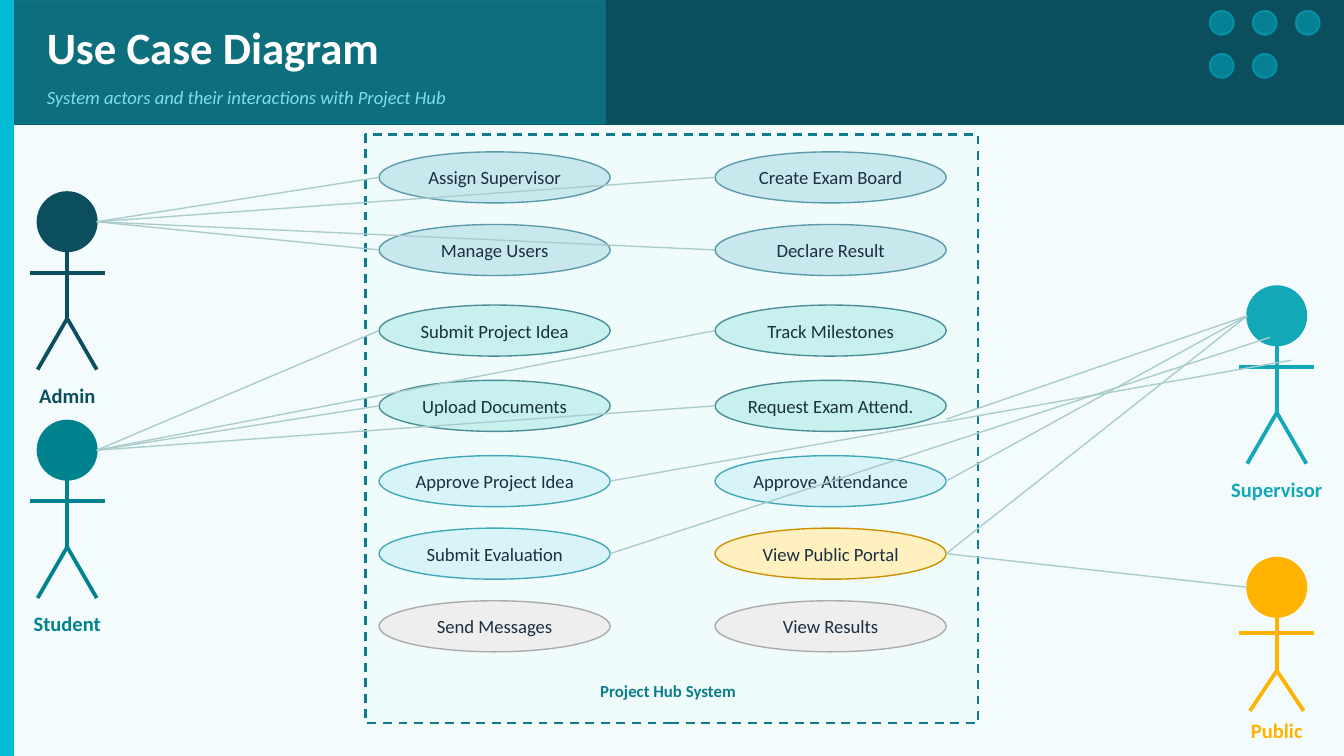
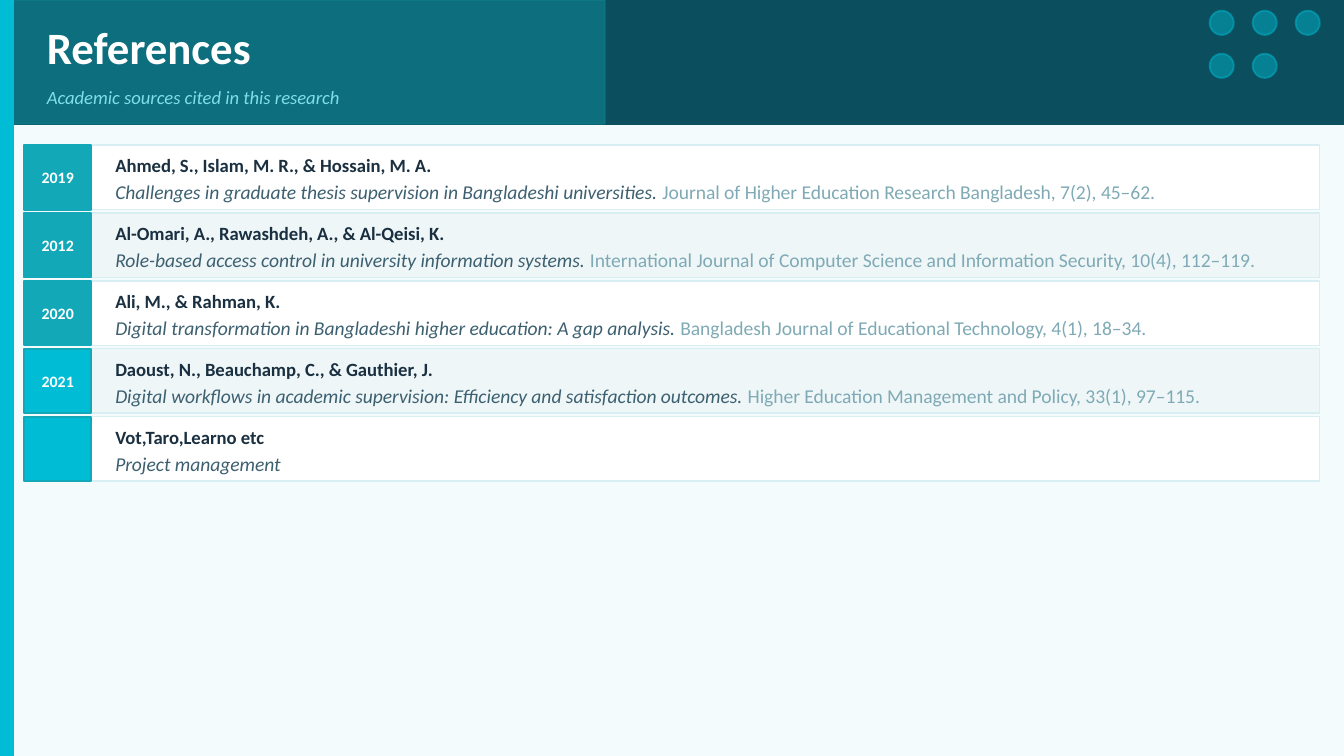
from dataclasses import dataclass
from typing import Any

import lxml.etree
import pptx
import pptx.dml.color
import pptx.enum.dml
import pptx.enum.shapes
import pptx.enum.text
import pptx.oxml.ns
import pptx.util

Inches = pptx.util.Inches
Pt = pptx.util.Pt
Kind = pptx.enum.shapes.MSO_SHAPE
Align = pptx.enum.text.PP_ALIGN
Area = tuple[float, float, float, float]
Point = tuple[float, float]

FONT = "Calibri"
WIDE, BAND = 10, 0.92
HIGH = WIDE * 9 / 16
PAGE, WHITE, INK = "F4FBFC", "FFFFFF", "1A3040"
NAVY, TEAL, GREEN = "0B4F5E", "0E7C8B", "00838F"
AQUA, CYAN, AMBER = "13A8B8", "00BCD4", "FFB300"
PALE, WIRE = "80DEEA", "AACCCC"


@dataclass(frozen=True)
class Actor:
    name: str
    tint: str
    x: float
    top: float
    side: int  # 1 links from the head's right, -1 from its left
    body: float = 0.5
    arm: float = 0.16
    leg: float = 0.38
    spread: float = 0.22
    gap: float = 0.06
    tall: float = 0.26

    def hand(self) -> Point:
        return self.x + self.side * HEAD / 2, self.top + HEAD / 2


@dataclass(frozen=True)
class Style:
    fill: str
    edge: str


@dataclass(frozen=True)
class Case:
    name: str
    col: int
    row: int
    style: Style

    def area(self) -> Area:
        return COLS[self.col], ROWS[self.row], OVAL_W, OVAL_H

    def side(self, right: bool = False, drop: float = 0) -> Point:
        """Point at the middle of the left or right edge, moved down by drop."""
        x, y, w, h = self.area()
        return x + w * right, y + h / 2 + drop


@dataclass(frozen=True)
class Entry:
    year: str
    names: str
    title: str
    source: str
    badge: str = AQUA


HEAD = 0.44
OVAL_W, OVAL_H = 1.72, 0.38
COLS = (2.82, 5.32)
ROWS = (1.13, 1.67, 2.27, 2.83, 3.39, 3.93, 4.47)

ADMIN = Actor("Admin", NAVY, 0.5, 1.43, 1)
STUDENT = Actor("Student", GREEN, 0.5, 3.13, 1)
TUTOR = Actor("Supervisor", AQUA, 9.5, 2.13, -1)
PUBLIC = Actor("Public", AMBER, 9.5, 4.15, -1, body=0.4, arm=0.12,
               leg=0.3, spread=0.2, gap=0.03, tall=0.22)

BLUE = Style("C8E8EE", "5A9AAA")
MINT = Style("C8F0EE", "4A8E98")
SKY = Style("D8F4F8", "40A8B8")
GOLD = Style("FFF0C0", "CC9000")
GREY = Style("EEEEEE", "AAAAAA")
PAIRS = [
    (("Assign Supervisor", BLUE), ("Create Exam Board", BLUE)),
    (("Manage Users", BLUE), ("Declare Result", BLUE)),
    (("Submit Project Idea", MINT), ("Track Milestones", MINT)),
    (("Upload Documents", MINT), ("Request Exam Attend.", MINT)),
    (("Approve Project Idea", SKY), ("Approve Attendance", SKY)),
    (("Submit Evaluation", SKY), ("View Public Portal", GOLD)),
    (("Send Messages", GREY), ("View Results", GREY)),
]
CASES = {(col, row): Case(name, col, row, style)
         for row, pair in enumerate(PAIRS)
         for col, (name, style) in enumerate(pair)}

ENTRIES = [
    Entry("2019", "Ahmed, S., Islam, M. R., & Hossain, M. A.",
          "Challenges in graduate thesis supervision in Bangladeshi universities. ",
          "Journal of Higher Education Research Bangladesh, 7(2), 45–62."),
    Entry("2012", "Al-Omari, A., Rawashdeh, A., & Al-Qeisi, K.",
          "Role-based access control in university information systems. ",
          "International Journal of Computer Science and Information Security, "
          "10(4), 112–119."),
    Entry("2020", "Ali, M., & Rahman, K.",
          "Digital transformation in Bangladeshi higher education: A gap analysis. ",
          "Bangladesh Journal of Educational Technology, 4(1), 18–34."),
    Entry("2021", "Daoust, N., Beauchamp, C., & Gauthier, J.",
          "Digital workflows in academic supervision: Efficiency and "
          "satisfaction outcomes. ",
          "Higher Education Management and Policy, 33(1), 97–115.", CYAN),
    Entry("", "Vot,Taro,Learno etc", "Project management", "", CYAN),
]


def paint(tint: str) -> pptx.dml.color.RGBColor:
    return pptx.dml.color.RGBColor.from_string(tint)


def fade(shape: Any, alpha: int) -> None:
    """Set the opacity of fill and line, in percent."""
    for node in shape._element.spPr.iter(pptx.oxml.ns.qn("a:srgbClr")):
        tag = pptx.oxml.ns.qn("a:alpha")
        lxml.etree.SubElement(node, tag).set("val", str(alpha * 1000))


def write(shape: Any, text: str, *, size: float, tint: str, bold: bool = False,
          italic: bool = False, center: bool = False, flush: bool = False,
          wrap: bool = True) -> None:
    """Add a run to the first paragraph; flush drops the insets."""
    frame = shape.text_frame
    frame.word_wrap = wrap
    frame.vertical_anchor = pptx.enum.text.MSO_ANCHOR.MIDDLE
    across, down = (0, 0) if flush else (0.1, 0.05)
    frame.margin_left = frame.margin_right = Inches(across)
    frame.margin_top = frame.margin_bottom = Inches(down)
    para = frame.paragraphs[0]
    para.alignment = Align.CENTER if center else Align.LEFT
    run = para.add_run()
    run.text = text
    run.font.name, run.font.size = FONT, Pt(size)
    run.font.bold, run.font.italic = bold, italic
    run.font.color.rgb = paint(tint)


def label(slide: Any, area: Area, text: str, **form: Any) -> Any:
    box = slide.shapes.add_textbox(*map(Inches, area))
    write(box, text, **form)
    return box


def block(slide: Any, kind: Any, area: Area, fill: str, edge: str = "",
          width: float = 1, alpha: int = 100) -> Any:
    shape = slide.shapes.add_shape(kind, *map(Inches, area))
    shape.shadow.inherit = False
    shape.fill.solid()
    shape.fill.fore_color.rgb = paint(fill)
    shape.line.color.rgb = paint(edge or fill)
    shape.line.width = Pt(width)
    if alpha < 100:
        fade(shape, alpha)
    return shape


def link(slide: Any, start: Point, end: Point, tint: str = WIRE,
         width: float = 0.75) -> None:
    line = slide.shapes.add_connector(
        pptx.enum.shapes.MSO_CONNECTOR.STRAIGHT, *map(Inches, start + end))
    line.line.color.rgb = paint(tint)
    line.line.width = Pt(width)
    lxml.etree.SubElement(line._element.spPr, pptx.oxml.ns.qn("a:effectLst"))


def begin(deck: Any, title: str, subhead: str) -> Any:
    """Add a slide with the shared band, dots and titles."""
    slide = deck.slides.add_slide(deck.slide_layouts[6])
    slide.background.fill.solid()
    slide.background.fill.fore_color.rgb = paint(PAGE)
    block(slide, Kind.RECTANGLE, (0, 0, WIDE, BAND), NAVY)
    block(slide, Kind.RECTANGLE, (0, 0, 4.5, BAND), TEAL, alpha=70)
    block(slide, Kind.RECTANGLE, (0, 0, 0.1, HIGH), CYAN)
    for dot in range(5):
        row, col = divmod(dot, 3)
        area = (9 + 0.32 * col, 0.08 + 0.32 * row, 0.18, 0.18)
        block(slide, Kind.OVAL, area, CYAN, alpha=45)
    label(slide, (0.25, 0.1, 8.5, 0.5), title, size=24, tint=WHITE, bold=True)
    label(slide, (0.25, 0.58, 8, 0.28), subhead, size=10, tint=PALE, italic=True)
    return slide


def figure(slide: Any, actor: Actor) -> None:
    x, tint = actor.x, actor.tint
    neck = actor.top + HEAD
    hip = neck + actor.body
    foot = hip + actor.leg
    arm = neck + actor.arm
    block(slide, Kind.OVAL, (x - HEAD / 2, actor.top, HEAD, HEAD), tint)
    limbs = [((x, neck), (x, hip)), ((x - 0.28, arm), (x + 0.28, arm)),
             ((x, hip), (x - actor.spread, foot)),
             ((x, hip), (x + actor.spread, foot))]
    for start, end in limbs:
        link(slide, start, end, tint, 2)
    label(slide, (x - 0.36, foot + actor.gap, 0.72, actor.tall), actor.name,
          size=11, tint=tint, bold=True, center=True, flush=True)


def diagram(deck: Any) -> None:
    slide = begin(deck, "Use Case Diagram",
                  "System actors and their interactions with Project Hub")
    frame = block(slide, Kind.RECTANGLE, (2.72, 1, 4.56, 4.38), "F0FBFC", TEAL, 1.2)
    frame.line.dash_style = pptx.enum.dml.MSO_LINE.DASH
    label(slide, (3.97, 5.01, 2, 0.26), "Project Hub System", size=9, tint=TEAL,
          bold=True, center=True, flush=True)
    for actor in (ADMIN, STUDENT, TUTOR, PUBLIC):
        figure(slide, actor)
    for case in CASES.values():
        oval = block(slide, Kind.OVAL, case.area(), case.style.fill,
                     case.style.edge, 0.75)
        write(oval, case.name, size=10, tint=INK, center=True, flush=True,
              wrap=False)
    for actor, rows in ((ADMIN, (0, 1)), (STUDENT, (2, 3))):
        for col in range(2):
            for row in rows:
                link(slide, actor.hand(), CASES[col, row].side())
    right = [(1, 4, 0, TUTOR.hand()), (1, 3, 0.1, TUTOR.hand()),
             (1, 5, 0, TUTOR.hand()), (1, 5, 0, PUBLIC.hand()),
             (0, 5, 0, (9.45, 2.51)), (0, 4, 0, (9.61, 2.68))]
    for col, row, drop, end in right:
        link(slide, CASES[col, row].side(True, drop), end)


def sources(deck: Any) -> None:
    slide = begin(deck, "References", "Academic sources cited in this research")
    left, first, last, tall = 0.18, 1.08, 3.1, 0.48
    step = (last - first) / (len(ENTRIES) - 1)
    for spot, entry in enumerate(ENTRIES):
        top = first + step * spot
        fill = "EEF6F8" if spot % 2 else WHITE
        block(slide, Kind.RECTANGLE, (left, top, 9.64, tall), fill, "D8EEF2", 0.75)
        badge = block(slide, Kind.RECTANGLE, (left, top, 0.5, tall),
                      entry.badge, AQUA)
        if entry.year:
            write(badge, entry.year, size=8.5, tint=WHITE, bold=True,
                  center=True, flush=True)
        label(slide, (0.76, top + 0.04, 8.94, 0.22), entry.names, size=10,
              tint=INK, bold=True)
        work = label(slide, (0.76, top + 0.25, 8.94, 0.2), entry.title,
                     size=10.5, tint="3D6070", italic=True)
        if entry.source:
            write(work, entry.source, size=10.5, tint="7FAAB5")


def main() -> None:
    deck = pptx.Presentation()
    deck.slide_width, deck.slide_height = Inches(WIDE), Inches(HIGH)
    diagram(deck)
    sources(deck)
    deck.save("out.pptx")


if __name__ == "__main__":
    main()
